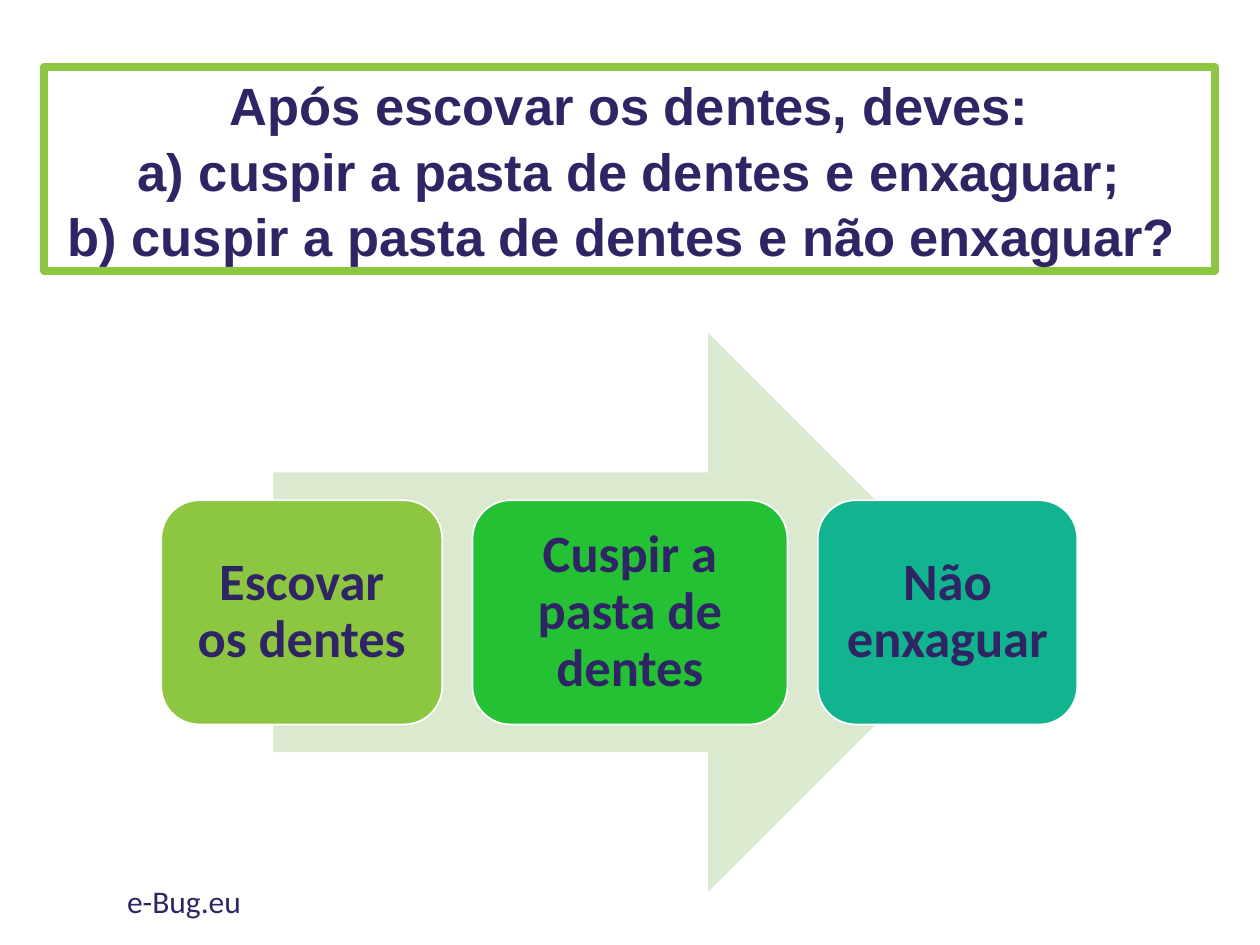
from pptx import Presentation
from pptx.dml.color import RGBColor
from pptx.enum import shapes, text
from pptx.util import Inches, Pt

NAVY = "302564"
WHITE = "FFFFFF"


def color(hex_code):
    return RGBColor.from_string(hex_code)


def add_span(para, words, size, font, bold=False):
    span = para.add_run()
    span.text = words
    span.font.size = Pt(size)
    span.font.name = font
    span.font.bold = bold
    span.font.color.rgb = color(NAVY)


deck = Presentation()
deck.slide_width, deck.slide_height = Inches(10), Inches(7.5)
page = deck.slides.add_slide(deck.slide_layouts[5])

# Question
title = page.shapes.title
title.left, title.top = Inches(0.35), Inches(0.53)
title.width, title.height = Inches(9.29), Inches(1.62)
title.fill.solid()
title.fill.fore_color.rgb = color(WHITE)
title.line.color.rgb = color("8DC641")
title.line.width = Pt(4.5)
frame = title.text_frame
frame.word_wrap = True
frame.auto_size = text.MSO_AUTO_SIZE.NONE
frame.vertical_anchor = text.MSO_ANCHOR.MIDDLE
para = frame.paragraphs[0]
para.alignment = text.PP_ALIGN.CENTER
para.line_spacing = 1.04
question = [
    "Após escovar os dentes, deves:",
    "a) cuspir a pasta de dentes e enxaguar;",
    "b) cuspir a pasta de dentes e não enxaguar? ",
]
for number, words in enumerate(question):
    if number:
        para.add_line_break()
    add_span(para, words, 30, "Arial", bold=True)

# Arrow behind the steps
arrow = page.shapes.add_shape(
    shapes.MSO_SHAPE.RIGHT_ARROW,
    Inches(2.17), Inches(2.64), Inches(5.67), Inches(4.44))
arrow.shadow.inherit = False
arrow.fill.solid()
arrow.fill.fore_color.rgb = color("DBEACF")
arrow.line.fill.background()

# Steps, left to right with equal gaps
steps = [
    ("Escovar os dentes", 2.23, "8DC641"),
    ("Cuspir a pasta de dentes", 2.5, "25C135"),
    ("Não enxaguar", 2.06, "12B38F"),
]
gap = 0.24
left = 1.28
for words, width, fill in steps:
    box = page.shapes.add_shape(
        shapes.MSO_SHAPE.ROUNDED_RECTANGLE,
        Inches(left), Inches(3.97), Inches(width), Inches(1.78))
    box.adjustments[0] = 0.17
    box.shadow.inherit = False
    box.fill.solid()
    box.fill.fore_color.rgb = color(fill)
    box.line.color.rgb = color(WHITE)
    box.line.width = Pt(1)
    frame = box.text_frame
    frame.word_wrap = True
    frame.vertical_anchor = text.MSO_ANCHOR.MIDDLE
    frame.margin_left = frame.margin_right = Inches(0.13)
    frame.margin_top = frame.margin_bottom = Inches(0.13)
    para = frame.paragraphs[0]
    para.alignment = text.PP_ALIGN.CENTER
    para.line_spacing = 0.9
    add_span(para, words, 30, "Calibri", bold=True)
    left += width + gap

# Web address
footer = page.shapes.add_textbox(
    Inches(0.91), Inches(6.95), Inches(3.38), Inches(0.4))
footer.text_frame.word_wrap = True
add_span(footer.text_frame.paragraphs[0], "e-Bug.eu", 18, "Calibri")

deck.save("out.pptx")
